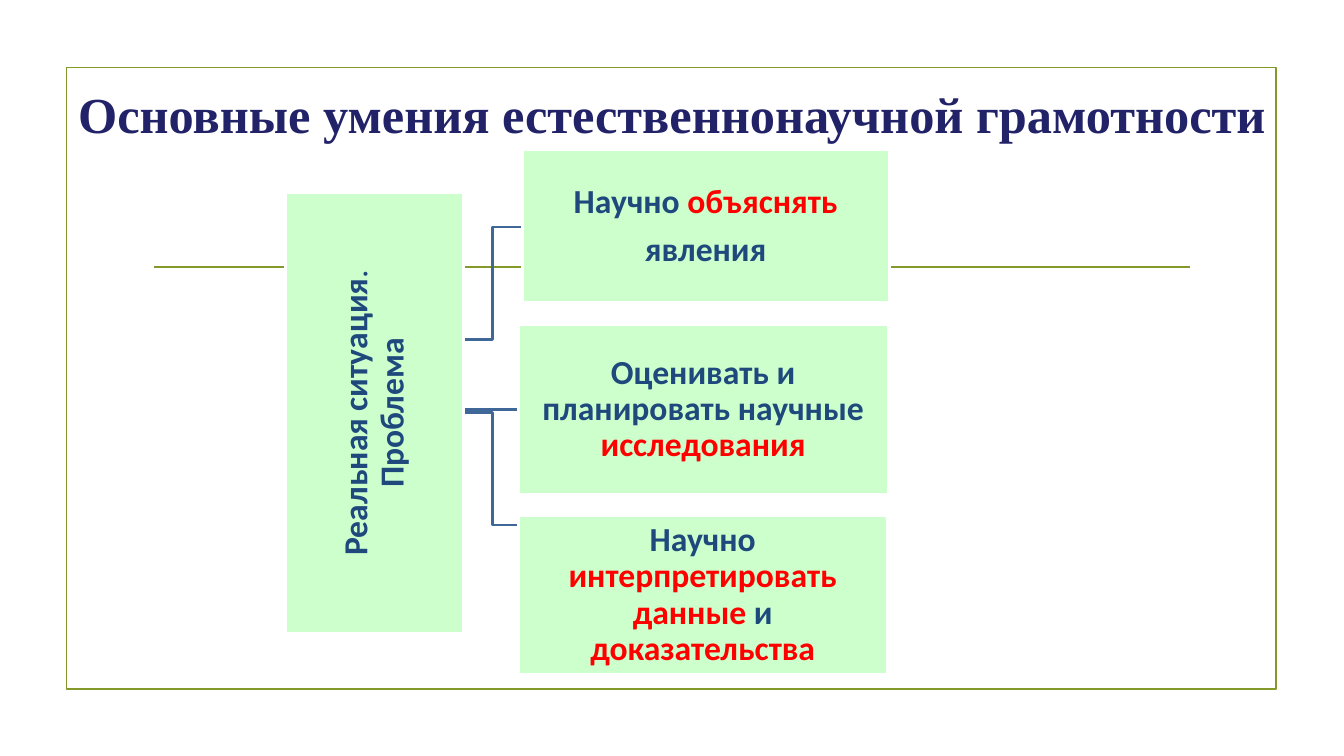
from dataclasses import dataclass

from lxml.etree import SubElement
from pptx import Presentation
from pptx.dml.color import RGBColor
from pptx.enum.shapes import MSO_CONNECTOR, MSO_SHAPE
from pptx.enum.text import MSO_ANCHOR, MSO_AUTO_SIZE, PP_ALIGN
from pptx.oxml.ns import qn
from pptx.util import Cm, Pt


@dataclass(frozen=True)
class Theme:
    """Colours, fonts and sizes of the slide."""
    frame: str = "83992A"
    title: str = "222268"
    link: str = "3F6797"
    box: str = "CCFFCC"
    border: str = "FFFFFF"
    text: str = "1F497D"
    accent: str = "FF0000"
    title_font: str = "Times New Roman"
    body_font: str = "Calibri"
    title_size: float = 36
    body_size: float = 24
    body_gap: float = 8.4
    thin: float = 1.25
    thick: float = 2


THEME = Theme()
INSET = Cm(0.05)
LINK_X = (11.66, 13.16)
LINKS = [(10.39, 13.23), (10.31, 10.31), (8.56, 5.72)]
PROBLEM = (3.89, 8.15, 11.1, 4.5)
PROBLEM_TEXT = [[("Реальная ситуация", THEME.text, True),
                 (". ", THEME.text, False),
                 ("Проблема", THEME.text, True)]]
SKILLS = [
    ((13.16, 3.78, 9.25, 3.84),
     [[("Научно ", THEME.text, True), ("объяснять", THEME.accent, True)],
      [("явления", THEME.text, True)]]),
    ((13.06, 8.18, 9.32, 4.29),
     [[("Оценивать и планировать научные ", THEME.text, True),
       ("исследования", THEME.accent, True)]]),
    ((13.06, 13, 9.3, 3.99),
     [[("Научно ", THEME.text, True),
       ("интерпретировать данные", THEME.accent, True),
       (" и ", THEME.text, True),
       ("доказательства", THEME.accent, True)]]),
]


def apply(target, values):
    """Set each attribute named in values on target."""
    for name, value in values.items():
        setattr(target, name, value)


def set_line(line, color, width):
    """Give a line its colour and width in points."""
    line.color.rgb = RGBColor.from_string(color)
    line.width = Pt(width)


def add_run(p, text, color, bold, font, size):
    """Append a formatted run to a paragraph."""
    r = p.add_run()
    r.text = text
    apply(r.font, {"name": font, "size": Pt(size), "bold": bold})
    r.font.color.rgb = RGBColor.from_string(color)


def set_frame(tf, inset):
    """Centre the text vertically and set equal insets."""
    apply(tf, {"word_wrap": True, "auto_size": MSO_AUTO_SIZE.NONE,
               "vertical_anchor": MSO_ANCHOR.MIDDLE,
               "margin_left": inset, "margin_right": inset,
               "margin_top": inset, "margin_bottom": inset})


def add_title(s, text):
    """Place and format the title placeholder."""
    sp = s.shapes.title
    apply(sp, {"left": Cm(1.7), "top": Cm(1.27),
               "width": Cm(30.48), "height": Cm(3.18)})
    set_frame(sp.text_frame, 0)
    p = sp.text_frame.paragraphs[0]
    p.alignment = PP_ALIGN.CENTER
    add_run(p, text, THEME.title, True, THEME.title_font, THEME.title_size)


def add_rect(s, box, line, width, fill=None):
    """Draw a rectangle, filled when a fill colour is given."""
    sp = s.shapes.add_shape(MSO_SHAPE.RECTANGLE, *map(Cm, box))
    sp.shadow.inherit = False
    if fill:
        sp.fill.solid()
        sp.fill.fore_color.rgb = RGBColor.from_string(fill)
    else:
        sp.fill.background()
    set_line(sp.line, line, width)
    return sp


def add_line(s, start, end, color, width):
    """Draw a straight line, or an elbow when the ends differ in height."""
    kind = MSO_CONNECTOR.STRAIGHT if start[1] == end[1] else MSO_CONNECTOR.ELBOW
    line = s.shapes.add_connector(kind, *map(Cm, start + end))
    set_line(line.line, color, width)
    SubElement(line._element.spPr, qn("a:effectLst"))


def add_box(s, box, paragraphs, rotation=0):
    """Draw a green box with centred text."""
    sp = add_rect(s, box, THEME.border, THEME.thick, THEME.box)
    sp.rotation = rotation
    tf = sp.text_frame
    set_frame(tf, INSET)
    for i, runs in enumerate(paragraphs):
        p = tf.add_paragraph() if i else tf.paragraphs[0]
        apply(p, {"alignment": PP_ALIGN.CENTER, "line_spacing": 0.9,
                  "space_after": Pt(THEME.body_gap)})
        for text, color, bold in runs:
            add_run(p, text, color, bold, THEME.body_font, THEME.body_size)


def main():
    """Build the slide and save it."""
    prs = Presentation()
    apply(prs, {"slide_width": Cm(33.87), "slide_height": Cm(19.05)})
    s = prs.slides.add_slide(prs.slide_layouts.get_by_name("Title Only"))
    add_rect(s, (1.68, 1.7, 30.48, 15.67), THEME.frame, THEME.thin)
    add_line(s, (3.89, 6.73), (30, 6.73), THEME.frame, THEME.thin)
    add_title(s, "Основные умения естественнонаучной грамотности")
    for start_y, end_y in LINKS:
        add_line(s, (LINK_X[0], start_y), (LINK_X[1], end_y),
                 THEME.link, THEME.thick)
    add_box(s, PROBLEM, PROBLEM_TEXT, rotation=270)
    for box, paragraphs in SKILLS:
        add_box(s, box, paragraphs)
    prs.save("out.pptx")


if __name__ == "__main__":
    main()
